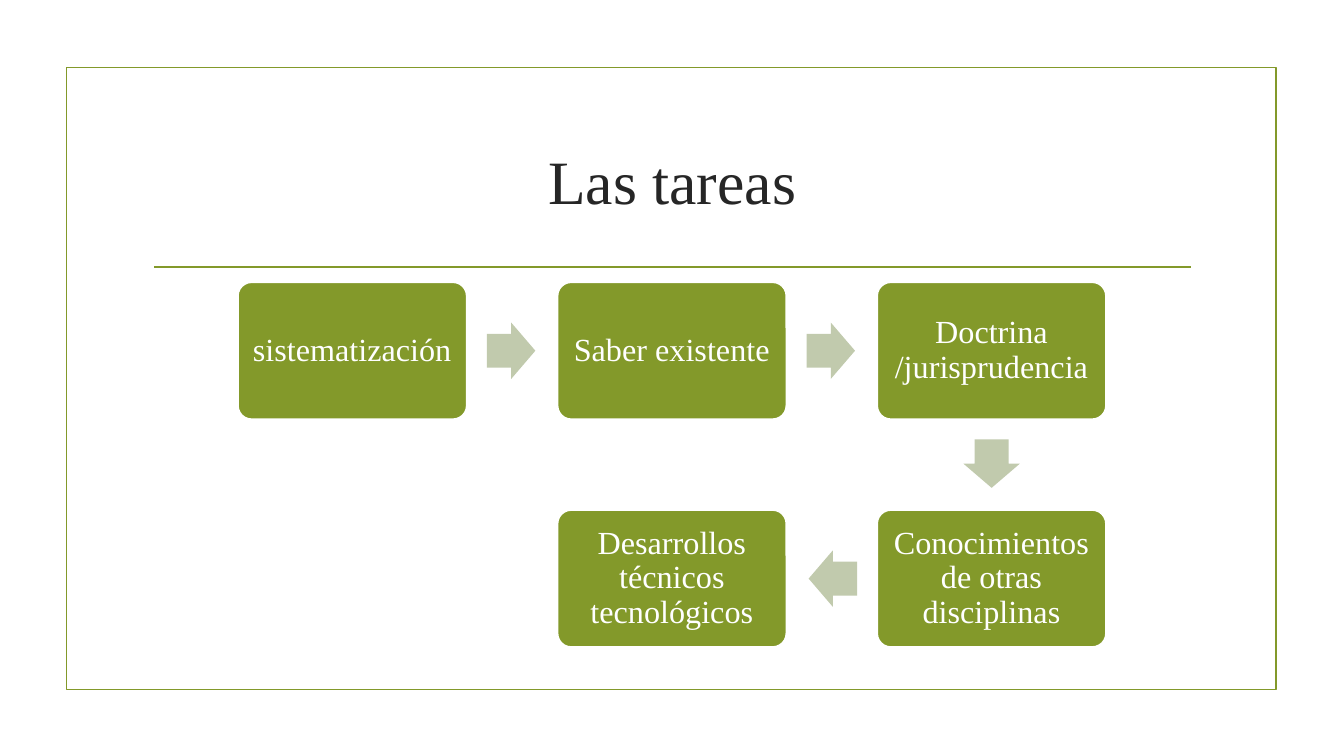
from dataclasses import dataclass

from lxml.etree import SubElement
from pptx import Presentation
from pptx.dml.color import RGBColor
from pptx.enum.shapes import MSO_CONNECTOR, MSO_SHAPE
from pptx.enum.text import MSO_ANCHOR, PP_ALIGN
from pptx.oxml.ns import qn
from pptx.util import Inches, Pt

COLORS = {"green": "83992A", "arrow": "C1CAAD", "title": "262626", "white": "FFFFFF"}
FONT = "Times New Roman"
LINE_W = Pt(1.25)

# Grid of the process diagram, in inches
LEFT, TOP = 2.36, 2.8
PITCH_X, PITCH_Y = 3.17, 2.26
BOX_W, BOX_H = 2.27, 1.36
ARROW_W, ARROW_H = 0.48, 0.56
ARROW_PULL = 0.01  # arrows sit slightly nearer the box they leave


@dataclass(frozen=True)
class Step:
    text: str
    col: int
    row: int

    @property
    def left(self) -> float:
        return LEFT + self.col * PITCH_X

    @property
    def top(self) -> float:
        return TOP + self.row * PITCH_Y


STEPS = [
    Step("sistematización", 0, 0),
    Step("Saber existente", 1, 0),
    Step("Doctrina /jurisprudencia", 2, 0),
    Step("Conocimientos de otras disciplinas", 2, 1),
    Step("Desarrollos técnicos tecnológicos", 1, 1),
]
ROTATIONS = {(1, 0): 0, (0, 1): 90, (-1, 0): 180}


def rgb(name: str) -> RGBColor:
    return RGBColor.from_string(COLORS[name])


def style_text(tf, size: float, color: str) -> None:
    tf.word_wrap = True
    tf.vertical_anchor = MSO_ANCHOR.MIDDLE
    p = tf.paragraphs[0]
    p.alignment = PP_ALIGN.CENTER
    for r in p.runs:
        r.font.name = FONT
        r.font.size = Pt(size)
        r.font.color.rgb = rgb(color)


def add_frame(slide) -> None:
    sp = slide.shapes.add_shape(
        MSO_SHAPE.RECTANGLE, Inches(0.66), Inches(0.67), Inches(12), Inches(6.17))
    sp.shadow.inherit = False
    sp.fill.background()
    sp.line.color.rgb = rgb("green")
    sp.line.width = LINE_W


def add_rule(slide) -> None:
    line = slide.shapes.add_connector(
        MSO_CONNECTOR.STRAIGHT, Inches(1.53), Inches(2.65), Inches(11.81), Inches(2.65))
    line.line.color.rgb = rgb("green")
    line.line.width = LINE_W
    SubElement(line._element.spPr, qn("a:effectLst"))


def add_title(slide, text: str) -> None:
    sp = slide.shapes.title
    sp.left, sp.top = Inches(1.42), Inches(1.07)
    sp.width, sp.height = Inches(10.5), Inches(1.43)
    sp.text_frame.text = text
    style_text(sp.text_frame, 44, "title")


def add_step(slide, step: Step) -> None:
    sp = slide.shapes.add_shape(
        MSO_SHAPE.ROUNDED_RECTANGLE, Inches(step.left), Inches(step.top),
        Inches(BOX_W), Inches(BOX_H))
    sp.adjustments[0] = 0.1
    sp.shadow.inherit = False
    sp.fill.solid()
    sp.fill.fore_color.rgb = rgb("green")
    sp.line.color.rgb = rgb("white")
    sp.line.width = LINE_W
    tf = sp.text_frame
    tf.margin_left = tf.margin_right = Inches(0.09)
    tf.margin_top = tf.margin_bottom = Inches(0.1)
    tf.text = step.text
    tf.paragraphs[0].line_spacing = 0.9
    style_text(tf, 23, "white")


def add_arrow(slide, start: Step, end: Step) -> None:
    dx, dy = end.col - start.col, end.row - start.row
    center_x = (start.left + end.left + BOX_W) / 2 - ARROW_PULL * dx
    center_y = (start.top + end.top + BOX_H) / 2 - ARROW_PULL * dy
    sp = slide.shapes.add_shape(
        MSO_SHAPE.RIGHT_ARROW, Inches(center_x - ARROW_W / 2),
        Inches(center_y - ARROW_H / 2), Inches(ARROW_W), Inches(ARROW_H))
    sp.adjustments[0], sp.adjustments[1] = 0.6, 0.5
    sp.rotation = ROTATIONS[dx, dy]
    sp.shadow.inherit = False
    sp.fill.solid()
    sp.fill.fore_color.rgb = rgb("arrow")
    sp.line.fill.background()


def main() -> None:
    prs = Presentation()
    prs.slide_width, prs.slide_height = Inches(13.33), Inches(7.5)
    s = prs.slides.add_slide(prs.slide_layouts.get_by_name("Title Only"))

    # Frame, rule and title
    add_frame(s)
    add_rule(s)
    add_title(s, "Las tareas")

    # Process diagram
    for step in STEPS:
        add_step(s, step)
    for start, end in zip(STEPS, STEPS[1:]):
        add_arrow(s, start, end)

    prs.save("out.pptx")


if __name__ == "__main__":
    main()
